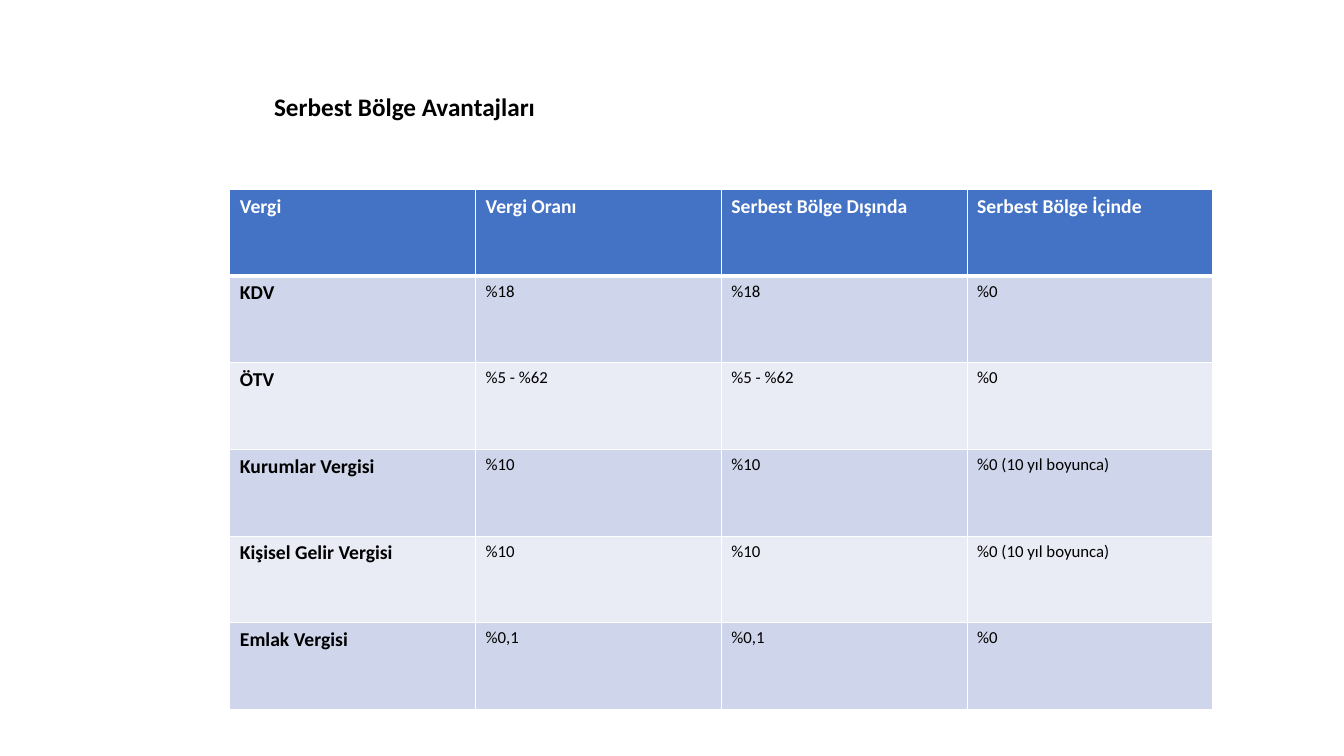
from lxml.etree import SubElement as Sub
from pptx import Presentation
from pptx.dml.color import RGBColor as RGB
from pptx.enum.text import MSO_AUTO_SIZE as AutoSize
from pptx.oxml.ns import qn
from pptx.util import Inches, Pt

COLORS = {"text": "000000", "white": "FFFFFF", "header": "4472C4",
          "odd": "CFD5EA", "even": "E9EBF5"}
FONTS = {
    "title": {"size": Pt(18), "bold": True, "name": "Calibri"},
    "label": {"size": Pt(14), "bold": True, "name": "Calibri"},
    "value": {"size": Pt(12), "bold": False, "name": "Calibri"},
}
TAXES = [
    ("Vergi", "Vergi Oranı", "Serbest Bölge Dışında", "Serbest Bölge İçinde"),
    ("KDV", "%18", "%18", "%0"),
    ("ÖTV", "%5 - %62", "%5 - %62", "%0"),
    ("Kurumlar Vergisi", "%10", "%10", "%0 (10 yıl boyunca)"),
    ("Kişisel Gelir Vergisi", "%10", "%10", "%0 (10 yıl boyunca)"),
    ("Emlak Vergisi", "%0,1", "%0,1", "%0"),
]


def write(tf, text, style, color):
    r = tf.paragraphs[0].add_run()
    r.text = text
    for key, value in FONTS[style].items():
        setattr(r.font, key, value)
    r.font.color.rgb = RGB.from_string(COLORS[color])


def set_borders(cell, widths):
    tcPr = cell._tc.get_or_add_tcPr()
    for side, width in widths.items():
        ln = Sub(tcPr, qn(f"a:ln{side}"), w=str(Pt(width)))
        fill = Sub(ln, qn("a:solidFill"))
        Sub(fill, qn("a:srgbClr"), val=COLORS["white"])


def add_title(s, box, text):
    tf = s.shapes.add_textbox(*box).text_frame
    tf.word_wrap = True
    tf.auto_size = AutoSize.SHAPE_TO_FIT_TEXT
    write(tf, text, "title", "text")


def add_tax_table(s, box, rows):
    table = s.shapes.add_table(len(rows), len(rows[0]), *box).table
    for i, row in enumerate(rows):
        band = "header" if i == 0 else "odd" if i % 2 else "even"
        for j, text in enumerate(row):
            cell = table.cell(i, j)
            set_borders(cell, {"L": 1, "R": 1, "T": 3 if i == 1 else 1,
                               "B": 3 if i == 0 else 1})
            cell.fill.solid()
            cell.fill.fore_color.rgb = RGB.from_string(COLORS[band])
            write(cell.text_frame, text,
                  "label" if i == 0 or j == 0 else "value",
                  "white" if i == 0 else "text")


def main():
    prs = Presentation()
    prs.slide_width, prs.slide_height = Inches(13.33), Inches(7.5)
    s = prs.slides.add_slide(prs.slide_layouts[6])
    add_title(s, [Inches(v) for v in (2.62, 0.86, 4.48, 0.4)],
              "Serbest Bölge Avantajları")
    add_tax_table(s, [Inches(v) for v in (2.28, 1.88, 9.75, 5.16)], TAXES)
    prs.save("out.pptx")


if __name__ == "__main__":
    main()
